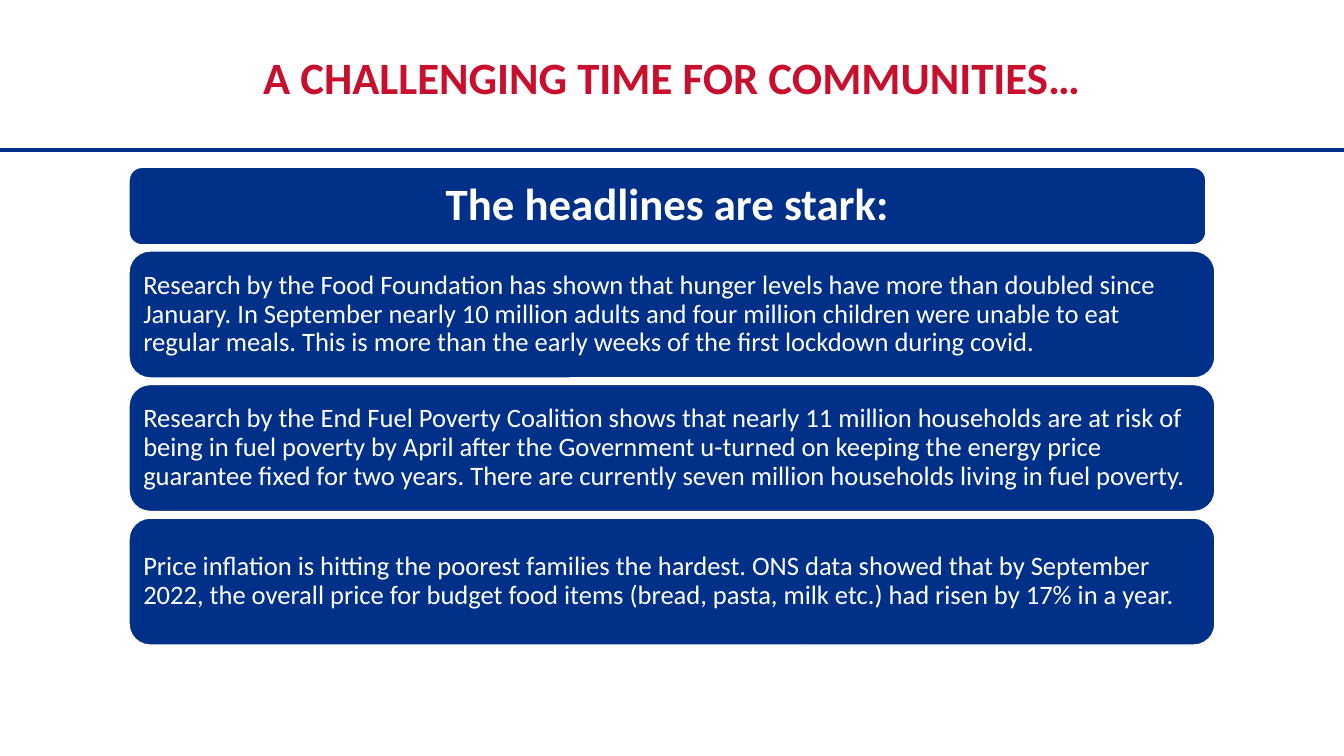
import pptx
import pptx.util
import pptx.dml.color
import pptx.enum.shapes
import pptx.enum.text
from pptx.util import Inches, Pt

TITLE = "A CHALLENGING TIME FOR COMMUNITIES…"
HEADING = "The headlines are stark:"
HEADLINES = [
    "Research by the Food Foundation has shown that hunger levels have more than doubled "
    "since January. In September nearly 10 million adults and four million children were "
    "unable to eat regular meals. This is more than the early weeks of the first lockdown "
    "during covid.",
    "Research by the End Fuel Poverty Coalition shows that nearly 11 million households are "
    "at risk of being in fuel poverty by April after the Government u-turned on keeping the "
    "energy price guarantee fixed for two years. There are currently seven million "
    "households living in fuel poverty.",
    "Price inflation is hitting the poorest families the hardest. ONS data showed that by "
    "September 2022, the overall price for budget food items (bread, pasta, milk etc.) had "
    "risen by 17% in a year.",
]

BLUE = pptx.dml.color.RGBColor(0x00, 0x30, 0x87)
RED = pptx.dml.color.RGBColor(0xC8, 0x10, 0x2E)
WHITE = pptx.dml.color.RGBColor(0xFF, 0xFF, 0xFF)
ALIGN = pptx.enum.text.PP_ALIGN

SLIDE_W, SLIDE_H = 13.33, 7.5
RULE_Y = 1.49
BOX_LEFT = 1.28
HEADING_TOP, HEADING_W, HEADING_H = 1.66, 10.68, 0.77
CARD_TOP, CARD_W, CARD_H, CARD_STEP = 2.49, 10.77, 1.26, 1.325


def write(sp, text, size, color, bold, align, inset_x, inset_y):
    tf = sp.text_frame
    tf.word_wrap = True
    tf.vertical_anchor = pptx.enum.text.MSO_ANCHOR.MIDDLE
    tf.margin_left = tf.margin_right = Inches(inset_x)
    tf.margin_top = tf.margin_bottom = Inches(inset_y)
    tf.text = text
    p = tf.paragraphs[0]
    p.alignment = align
    p.line_spacing = 0.9
    font = p.runs[0].font
    font.name, font.size, font.bold = "Calibri", Pt(size), bold
    font.color.rgb = color


def add_box(s, top, width, height):
    sp = s.shapes.add_shape(
        pptx.enum.shapes.MSO_SHAPE.ROUNDED_RECTANGLE,
        Inches(BOX_LEFT), Inches(top), Inches(width), Inches(height))
    sp.shadow.inherit = False
    sp.fill.solid()
    sp.fill.fore_color.rgb = BLUE
    sp.line.color.rgb = WHITE
    sp.line.width = Pt(1)
    return sp


prs = pptx.Presentation()
prs.slide_width, prs.slide_height = Inches(SLIDE_W), Inches(SLIDE_H)
s = prs.slides.add_slide(prs.slide_layouts[6])

rule = s.shapes.add_connector(pptx.enum.shapes.MSO_CONNECTOR.STRAIGHT,
                              0, Inches(RULE_Y), Inches(SLIDE_W), Inches(RULE_Y))
rule.line.color.rgb = BLUE
rule.line.width = Pt(3)
spPr = rule.line._get_or_add_ln().getparent()
spPr.append(spPr.makeelement(pptx.oxml.ns.qn("a:effectLst"), {}))

title = s.shapes.add_textbox(Inches(0.59), Inches(0.58), Inches(12.15), Inches(0.42))
write(title, TITLE, 32, RED, True, ALIGN.CENTER, 0, 0)

heading = add_box(s, HEADING_TOP, HEADING_W, HEADING_H)
write(heading, HEADING, 32, WHITE, True, ALIGN.CENTER, 0.13, 0.07)

for i, headline in enumerate(HEADLINES):
    card = add_box(s, CARD_TOP + i * CARD_STEP, CARD_W, CARD_H)
    write(card, headline, 19, WHITE, False, ALIGN.LEFT, 0.08, 0.04)

prs.save("out.pptx")
